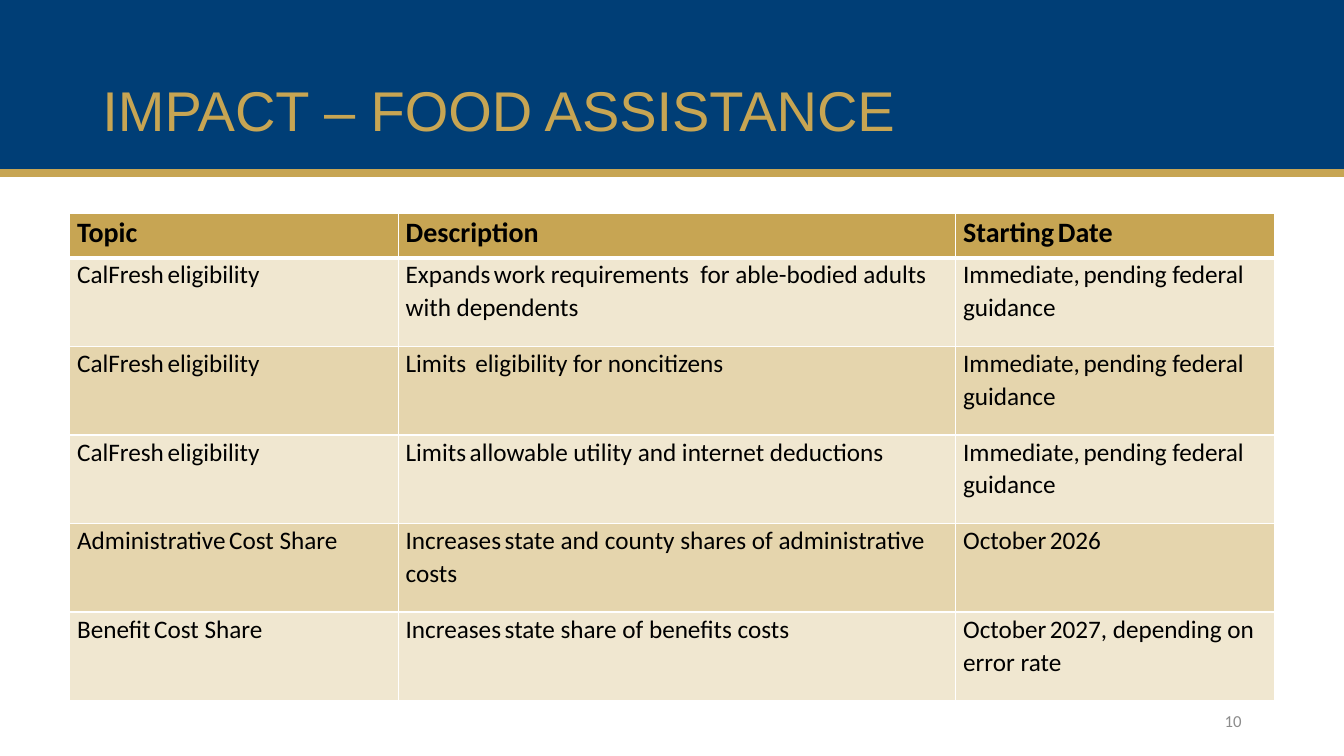
from lxml import etree
from pptx import Presentation
from pptx.dml.color import RGBColor as Rgb
from pptx.enum.shapes import MSO_CONNECTOR as Connector, MSO_SHAPE as Shape
from pptx.enum.text import MSO_ANCHOR as Anchor, PP_ALIGN as Align
from pptx.oxml.ns import qn
from pptx.util import Pt

WIDTH, HEIGHT = 960, 540
BAND_HEIGHT = 123.8
COLORS = {
    "navy": "003E76",
    "gold": "C7A553",
    "light": "F0E7D0",
    "tan": "E5D5AD",
    "white": "FFFFFF",
    "black": "000000",
    "gray": "8C8C8C",
}
HARD_SPACE = " "
COLUMN_WIDTHS = [234.7, 398.2, 227.5]
HEADER_HEIGHT, ROW_HEIGHT = 31.6, 63.25
IMPACTS = [
    ("Topic", "Description", "Starting Date"),
    ("CalFresh eligibility",
     "Expands work requirements  for able-bodied adults with dependents",
     "Immediate, pending federal guidance"),
    ("CalFresh eligibility", "Limits  eligibility for noncitizens",
     "Immediate, pending federal guidance"),
    ("CalFresh eligibility", "Limits allowable utility and internet deductions",
     "Immediate, pending federal guidance"),
    ("Administrative Cost Share",
     "Increases state and county shares of administrative costs", "October 2026"),
    ("Benefit Cost Share", "Increases state share of benefits costs",
     "October 2027, depending on error rate"),
]


class SlideBuilder:
    def __init__(self, slide):
        self.slide = slide
        self.shapes = slide.shapes

    def color(self, name):
        return Rgb.from_string(COLORS[name])

    def style(self, paragraph, font_name, size, color, bold=False):
        font = paragraph.font
        font.name, font.size, font.bold = font_name, Pt(size), bold
        font.color.rgb = self.color(color)

    def place(self, shape, left, top, width, height):
        shape.left, shape.top = Pt(left), Pt(top)
        shape.width, shape.height = Pt(width), Pt(height)

    def band(self, height, color):
        """Draw a full-width band behind the title."""
        band = self.shapes.add_shape(Shape.RECTANGLE, 0, 0, Pt(WIDTH), Pt(height))
        band.shadow.inherit = False
        band.fill.solid()
        band.fill.fore_color.rgb = self.color(color)
        band.line.fill.background()
        self.shapes.title.element.addprevious(band.element)

    def rule(self, y, color, weight):
        rule = self.shapes.add_connector(Connector.STRAIGHT, 0, Pt(y), Pt(WIDTH), Pt(y))
        rule.line.color.rgb = self.color(color)
        rule.line.width = Pt(weight)
        etree.SubElement(rule.element.spPr, qn("a:effectLst"))

    def title(self, text, *box):
        title = self.shapes.title
        self.place(title, *box)
        title.text_frame.text = text
        title.text_frame.vertical_anchor = Anchor.MIDDLE
        heading = title.text_frame.paragraphs[0]
        heading.alignment = Align.LEFT
        heading.line_spacing = 0.9
        self.style(heading, "Arial", 40, "gold")

    def page_number(self, number, *box):
        frame = self.shapes.add_textbox(*map(Pt, box)).text_frame
        frame.word_wrap = True
        frame.vertical_anchor = Anchor.MIDDLE
        frame.text = number
        frame.paragraphs[0].alignment = Align.RIGHT
        self.style(frame.paragraphs[0], "Calibri", 12, "gray")

    def borders(self, cell, top, bottom):
        properties = cell._tc.get_or_add_tcPr()
        for side, weight in (("L", 1), ("R", 1), ("T", top), ("B", bottom)):
            line = etree.SubElement(properties, qn(f"a:ln{side}"), w=str(Pt(weight)))
            fill = etree.SubElement(line, qn("a:solidFill"))
            etree.SubElement(fill, qn("a:srgbClr"), val=COLORS["white"])

    def cell(self, cell, text, row):
        is_header = row == 0
        self.borders(cell, 3 if row == 1 else 1, 3 if is_header else 1)
        cell.fill.solid()
        fill = "gold" if is_header else ("tan", "light")[row % 2]
        cell.fill.fore_color.rgb = self.color(fill)
        cell.margin_left = cell.margin_right = Pt(5.3)
        cell.margin_top = cell.margin_bottom = 0
        paragraph = cell.text_frame.paragraphs[0]
        paragraph.line_spacing = 1.07
        self.style(paragraph, "Calibri", 20 if is_header else 18, "black", is_header)
        for part in filter(None, text.partition(HARD_SPACE)):
            run = paragraph.add_run()
            run.text = part
            if part == HARD_SPACE:
                run.font.size = Pt(11)

    def table(self, rows, left, top):
        heights = [HEADER_HEIGHT] + [ROW_HEIGHT] * (len(rows) - 1)
        table = self.shapes.add_table(
            len(rows), len(COLUMN_WIDTHS), Pt(left), Pt(top),
            Pt(sum(COLUMN_WIDTHS)), Pt(sum(heights))).table
        table.first_row = table.horz_banding = False
        for column, width in zip(table.columns, COLUMN_WIDTHS):
            column.width = Pt(width)
        for r, (height, texts) in enumerate(zip(heights, rows)):
            table.rows[r].height = Pt(height)
            for c, text in enumerate(texts):
                self.cell(table.cell(r, c), text, r)


def main():
    deck = Presentation()
    deck.slide_width, deck.slide_height = Pt(WIDTH), Pt(HEIGHT)
    builder = SlideBuilder(deck.slides.add_slide(deck.slide_layouts[5]))
    builder.band(BAND_HEIGHT, "navy")
    builder.title("IMPACT – FOOD ASSISTANCE", 66, 28.8, 828, 104.4)
    builder.rule(BAND_HEIGHT, "gold", 5.75)
    builder.page_number("10", 678, 500.5, 216, 28.75)
    builder.table(IMPACTS, 49.8, 152.6)
    deck.save("out.pptx")


if __name__ == "__main__":
    main()
